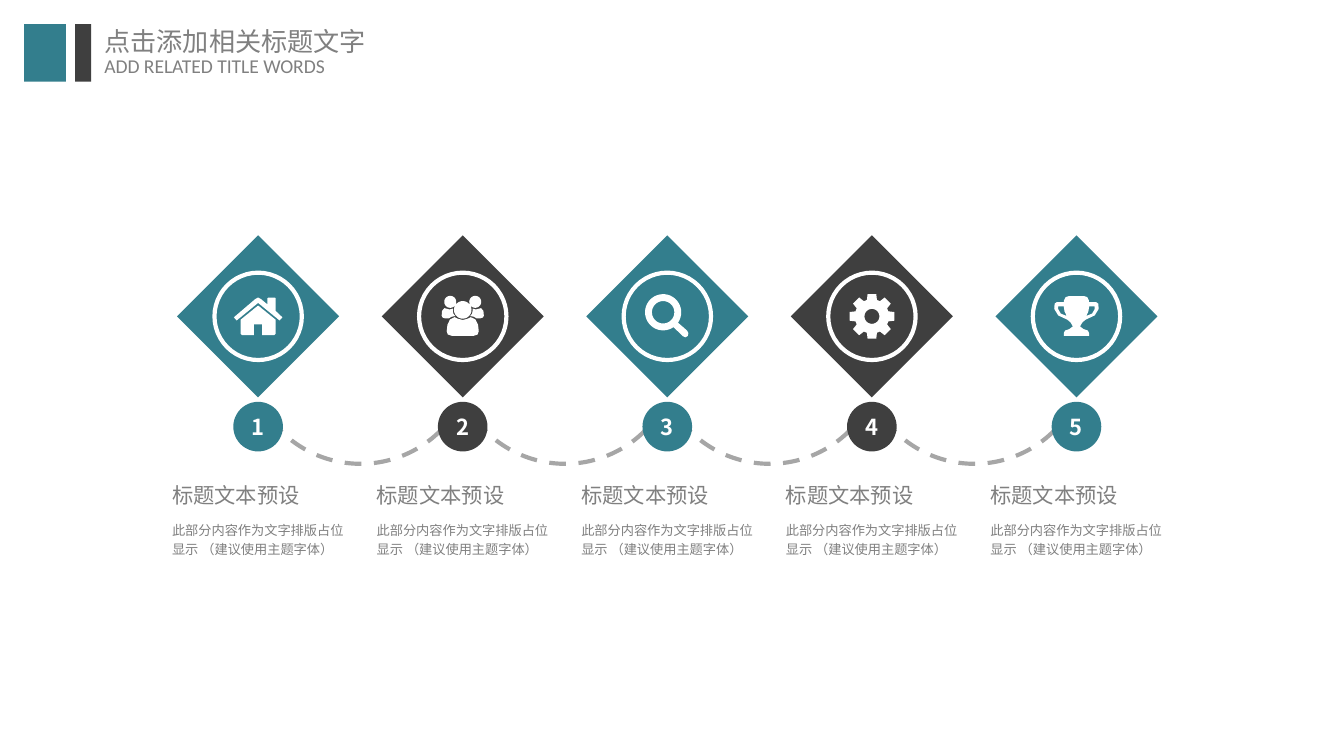
from math import cos, radians, sin

from lxml.etree import SubElement
from pptx import Presentation
from pptx.dml.color import RGBColor
from pptx.enum.dml import MSO_LINE_DASH_STYLE as DASH
from pptx.enum.shapes import MSO_SHAPE as SHAPE
from pptx.enum.text import MSO_ANCHOR as ANCHOR, PP_ALIGN as ALIGN
from pptx.oxml.ns import qn
from pptx.util import Pt

TEAL, DARK, GREY, ARC_GREY, WHITE = "337E8D", "3F3F3F", "808080", "A6A6A6", "FFFFFF"
CJK, LATIN = "Noto Sans CJK SC", "Calibri"
STEP_TITLE = "标题文本预设"
STEP_BODY = "此部分内容作为文字排版占位\n显示 （建议使用主题字体）"


def color(value):
    return RGBColor.from_string(value)


def style(sp, fill=None, line=None, weight=2.25):
    sp.shadow.inherit = False
    if fill:
        sp.fill.solid()
        sp.fill.fore_color.rgb = color(fill)
    else:
        sp.fill.background()
    if line:
        sp.line.color.rgb = color(line)
        sp.line.width = Pt(weight)
    else:
        sp.line.fill.background()


def add_shape(s, kind, x, y, w, h, **look):
    sp = s.shapes.add_shape(kind, Pt(x), Pt(y), Pt(w), Pt(h))
    style(sp, **look)
    return sp


def write(sp, text, size, fill=GREY, font=CJK, bold=False, align=ALIGN.LEFT,
          anchor=ANCHOR.TOP, wrap=False, inset=(5, 2.9), spacing=None):
    tf = sp.text_frame
    tf.word_wrap = wrap
    tf.vertical_anchor = anchor
    tf.margin_left = tf.margin_right = Pt(inset[0])
    tf.margin_top = tf.margin_bottom = Pt(inset[1])
    p = tf.paragraphs[0]
    p.text = text
    p.alignment = align
    p.line_spacing = spacing
    p.font.size = Pt(size)
    p.font.bold = bold
    p.font.color.rgb = color(fill)
    p.font.name = font
    # East Asian characters take their typeface from a:ea
    SubElement(p._p.pPr.find(qn("a:defRPr")), qn("a:ea"), typeface=font)


def add_text(s, x, y, w, h, text, size, **look):
    write(s.shapes.add_textbox(Pt(x), Pt(y), Pt(w), Pt(h)), text, size, **look)


# Icon outlines: lists of contours in points around the icon centre
def arc(cx, cy, radius, start=0, end=360, steps=40):
    angles = [radians(start + (end - start) * i / steps) for i in range(steps + 1)]
    return [(cx + radius * cos(a), cy + radius * sin(a)) for a in angles]


def flip(points):
    return [(-x, y) for x, y in reversed(points)]


def home_icon():
    roof = [(11.5, 2.2), (0, -7.2), (-11.5, 2.2), (-13, 0.5), (-1.5, -9.3),
            (0, -10.1), (1.5, -9.3), (5, -6.4), (5, -9.7), (5.5, -10.1),
            (9, -10.1), (9.4, -9.7), (9.4, -2.9), (13, 0.5)]
    wall = [(9.4, 1.8), (9.4, 9.3), (8.6, 10.1), (2.2, 10.1), (2.2, 4.3)]
    return [roof, [(0, -5.8)] + wall + flip(wall)]


def people_icon():
    body = [(0, 1.9), (2.5, 1.3), (4.3, 0.4), (6.8, 1.6), (8.2, 4.5),
            (8.6, 7.9), (8, 9.7), (5.8, 10.4)]
    shoulder = [(7.5, 1.1), (9.4, 1.1), (10.8, 0.6), (11.3, -0.4), (11.1, -3),
                (9.8, -4.4), (7, -3.7), (5.3, -4.2), (5.3, -3), (5, -1.4),
                (4, -0.2), (6, 0.2)]
    side_head = arc(6.7, -7.8, 3.2)
    return [arc(0, -3.5, 4.7), body + flip(body), shoulder, flip(shoulder),
            side_head, flip(side_head)]


def search_icon():
    handle = [(10.6, 7.6), (11.3, 9), (11, 10.5), (9.7, 11.2), (8.3, 10.6)]
    return [arc(-2.2, -2.2, 9.7, 55, 395) + handle, arc(-2.2, -2.2, 6)]


def gear_icon():
    tooth = [(9.2, -17), (12.2, -11), (12.2, 11), (9.2, 17)]
    rim = [(r * cos(radians(45 * k + a)), r * sin(radians(45 * k + a)))
           for k in range(8) for r, a in tooth]
    return [rim, arc(0, 0, 4)]


def trophy_icon():
    side = [(4, -10.9), (5.8, -10.3), (6.7, -8.5), (6.7, -7.6), (10.6, -7.6),
            (11.7, -6.8), (11.9, -4), (9.8, -0.5), (4.9, 1.8), (3.2, 3.2),
            (1.9, 5.4), (3.8, 6.8), (6.1, 7.6), (6.8, 9), (6.8, 10.4)]
    grip = [(6.8, -5.3), (9.8, -5.3), (9.8, -3.9), (8.4, -1.5), (5.2, -0.2), (6.4, -2.6)]
    return [side + flip(side), grip, flip(grip)]


def add_icon(s, cx, cy, contours):
    outlines = [[(Pt(cx + x), Pt(cy + y)) for x, y in c] for c in contours]
    builder = s.shapes.build_freeform(*outlines[0][0])
    for i, outline in enumerate(outlines):
        if i:
            builder.move_to(*outline[0])
        builder.add_line_segments(outline[1:], close=True)
    style(builder.convert_to_shape(), fill=WHITE)


# Regions
def add_header(s, x, y, h):
    add_shape(s, SHAPE.RECTANGLE, x, y, 22.5, h, fill=TEAL)
    add_shape(s, SHAPE.RECTANGLE, x + 27.4, y, 8.6, h, fill=DARK)
    add_text(s, x + 35.4, y - 2.9, 157, 24.5, "点击添加相关标题文字", 14, inset=(7.6, 3.6))
    add_text(s, x + 35.4, y + 12.2, 142, 21, "ADD RELATED TITLE WORDS", 10.5,
             font=LATIN, inset=(7.6, 3.6))


def add_link(s, cx, y, size):
    sp = add_shape(s, SHAPE.ARC, cx - size / 2, y, size, size, line=ARC_GREY)
    sp.rotation = 135
    sp.line.dash_style = DASH.DASH


def add_step(s, x, y, w, number, fill, icon):
    cx, cy = x + w / 2, y + 43.4
    # Diamond with ringed icon
    add_shape(s, SHAPE.DIAMOND, cx - 43.4, y, 86.8, 86.8, fill=fill)
    add_shape(s, SHAPE.OVAL, cx - 23.4, cy - 23.4, 46.8, 46.8, fill=fill, line=WHITE)
    add_icon(s, cx, cy, icon)
    # Number badge
    badge = add_shape(s, SHAPE.OVAL, cx - 13.3, y + 89.2, 26.6, 26.6, fill=fill)
    write(badge, str(number), 11.8, fill=WHITE, bold=True, align=ALIGN.CENTER,
          anchor=ANCHOR.MIDDLE)
    # Caption
    add_text(s, x, y + 115.2, w, 33.8, STEP_TITLE, 11.4, anchor=ANCHOR.BOTTOM)
    add_text(s, x, y + 149, w, 30.2, STEP_BODY, 7.1, wrap=True, spacing=1.2)


def add_process(s, x, y, w, pitch):
    icons = [home_icon(), people_icon(), search_icon(), gear_icon(), trophy_icon()]
    for i in range(len(icons) - 1):
        add_link(s, x + w / 2 + (i + 0.5) * pitch, y + 1.4, 121)
    for i, icon in enumerate(icons):
        add_step(s, x + i * pitch, y, w, i + 1, DARK if i % 2 else TEAL, icon)


def main():
    prs = Presentation()
    prs.slide_width, prs.slide_height = Pt(720), Pt(405)
    s = prs.slides.add_slide(prs.slide_layouts[6])
    add_header(s, 12.9, 12.9, 30.8)
    add_process(s, 87.2, 126.1, 102.2, 109.6)
    prs.save("out.pptx")


if __name__ == "__main__":
    main()
